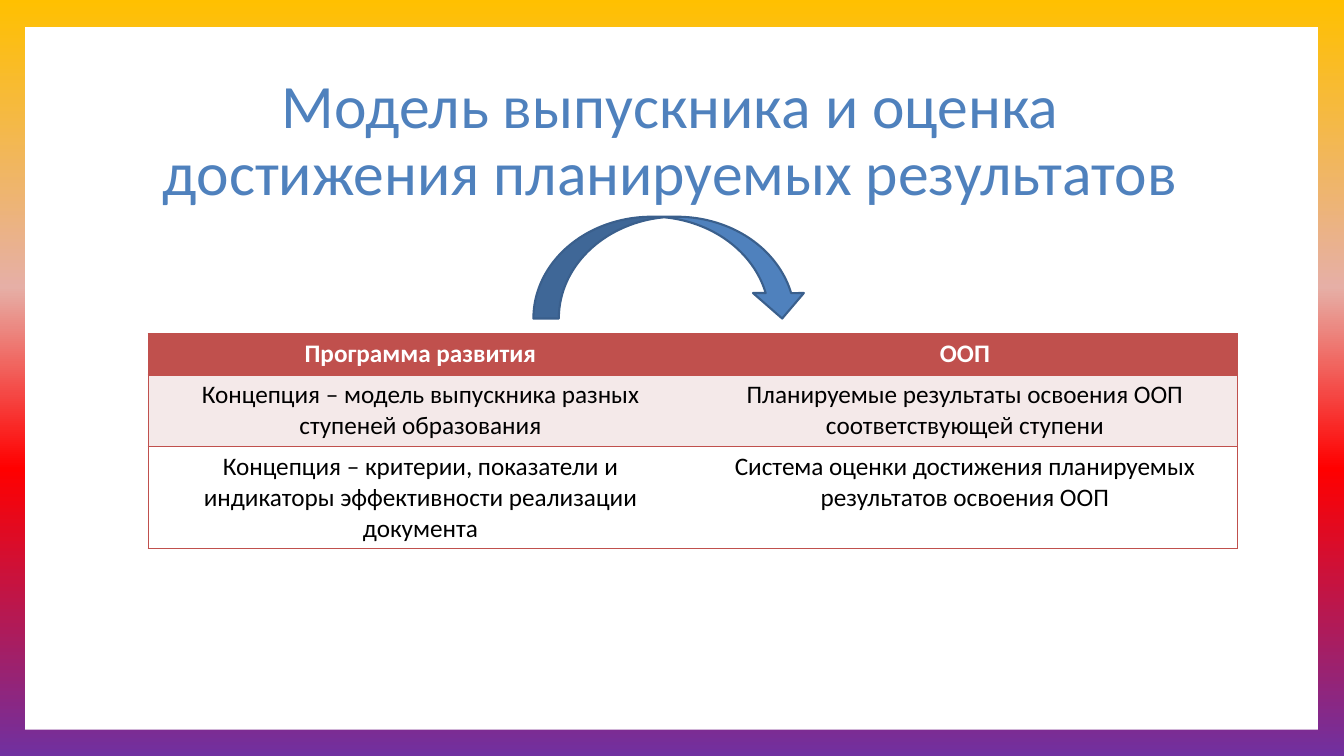
import copy

import pptx
import pptx.dml.color
import pptx.enum.shapes
import pptx.enum.text
import pptx.oxml
import pptx.oxml.ns
import pptx.util

Inches = pptx.util.Inches
Pt = pptx.util.Pt
RGBColor = pptx.dml.color.RGBColor
qn = pptx.oxml.ns.qn
CENTER = pptx.enum.text.PP_ALIGN.CENTER
MIDDLE = pptx.enum.text.MSO_ANCHOR.MIDDLE
MSO_SHAPE = pptx.enum.shapes.MSO_SHAPE

WHITE = RGBColor(0xFF, 0xFF, 0xFF)
BLACK = RGBColor(0, 0, 0)
BLUE = RGBColor(0x4F, 0x81, 0xBD)
DARK_BLUE = RGBColor(0x3A, 0x5F, 0x8C)
RED = RGBColor(0xC0, 0x50, 0x4D)
PALE_RED = RGBColor(0xF4, 0xE9, 0xE9)

HEADING = "Модель выпускника и оценка достижения планируемых результатов"
ROWS = [
    ("Программа развития", "ООП"),
    ("Концепция – модель выпускника разных ступеней образования",
     "Планируемые результаты освоения ООП соответствующей ступени"),
    ("Концепция – критерии, показатели и индикаторы эффективности реализации документа",
     "Система оценки достижения планируемых результатов освоения ООП"),
]
ROW_HEIGHTS = [0.41, 0.71, 1.01]
ROW_FILLS = [RED, PALE_RED, WHITE]
HEADER_FONT = {"name": "Calibri", "size": Pt(18), "bold": True}
BODY_FONT = {"name": "Calibri", "size": Pt(18), "bold": False}
HEADING_FONT = {"name": "Calibri", "size": Pt(44), "bold": False}
BACKDROP = [
    (0, RGBColor(0xFF, 0xC0, 0x00)),
    (0.38, RGBColor(0xE6, 0xAF, 0xA6)),
    (0.62, RGBColor(0xFF, 0x00, 0x00)),
    (1, RGBColor(0x70, 0x30, 0xA0)),
]
PANEL_BOX = (0.25, 0.27, 12.82, 6.97)
HEADING_BOX = (1.25, 0.67, 10.8, 1.48)
ARROW_BOX = (5.29, 2.15, 2.72, 1.01)
TABLE_BOX = (1.47, 3.31, 10.8, sum(ROW_HEIGHTS))
NO_STYLE = "{2D5ABB26-0587-4C30-8999-92F81FD0307C}"


def inches(box):
    return [Inches(length) for length in box]


def write(frame, text, font, color):
    paragraph = frame.paragraphs[0]
    paragraph.alignment = CENTER
    run = paragraph.add_run()
    run.text = text
    for key, value in font.items():
        setattr(run.font, key, value)
    run.font.color.rgb = color
    return paragraph


def add_filled(slide, preset, box, color):
    shape = slide.shapes.add_shape(preset, *inches(box))
    shape.shadow.inherit = False
    shape.fill.solid()
    shape.fill.fore_color.rgb = color
    return shape


def paint_backdrop(slide):
    fill = slide.background.fill
    fill.gradient()
    fill.gradient_angle = 270
    stop_list = next(slide.element.iter(qn("a:gsLst")))
    while len(stop_list) < len(BACKDROP):
        stop_list.append(copy.deepcopy(stop_list[0]))
    for stop, (position, color) in zip(fill.gradient_stops, BACKDROP):
        stop.position = position
        stop.color.rgb = color


def add_borders(cell, sides):
    properties = cell._tc.get_or_add_tcPr()
    for side in sides:
        properties.append(pptx.oxml.parse_xml(
            f'<a:ln{side} {pptx.oxml.ns.nsdecls("a")} w="{Pt(1)}"><a:solidFill>'
            f'<a:srgbClr val="{RED}"/></a:solidFill></a:ln{side}>'))


def add_program_table(slide):
    frame = slide.shapes.add_table(len(ROWS), len(ROWS[0]), *inches(TABLE_BOX))
    table = frame.table
    table.horz_banding = False
    next(table._tbl.iter(qn("a:tableStyleId"))).text = NO_STYLE
    for r, texts in enumerate(ROWS):
        table.rows[r].height = Inches(ROW_HEIGHTS[r])
        font, color = (BODY_FONT, BLACK) if r else (HEADER_FONT, WHITE)
        for c, text in enumerate(texts):
            cell = table.cell(r, c)
            write(cell.text_frame, text, font, color)
            add_borders(cell, "RTB" if c else "LTB")
            cell.fill.solid()
            cell.fill.fore_color.rgb = ROW_FILLS[r]


def main():
    deck = pptx.Presentation()
    deck.slide_width = Inches(13.33)
    deck.slide_height = Inches(7.5)
    slide = deck.slides.add_slide(deck.slide_layouts[6])
    paint_backdrop(slide)

    panel = add_filled(slide, MSO_SHAPE.RECTANGLE, PANEL_BOX, WHITE)
    panel.line.fill.background()

    heading = slide.shapes.add_textbox(*inches(HEADING_BOX)).text_frame
    heading.word_wrap = True
    heading.vertical_anchor = MIDDLE
    write(heading, HEADING, HEADING_FONT, BLUE).line_spacing = 0.9

    add_program_table(slide)

    arrow = add_filled(slide, MSO_SHAPE.CURVED_DOWN_ARROW, ARROW_BOX, BLUE)
    arrow.line.color.rgb = DARK_BLUE
    arrow.line.width = Pt(1.5)

    deck.save("out.pptx")


if __name__ == "__main__":
    main()
